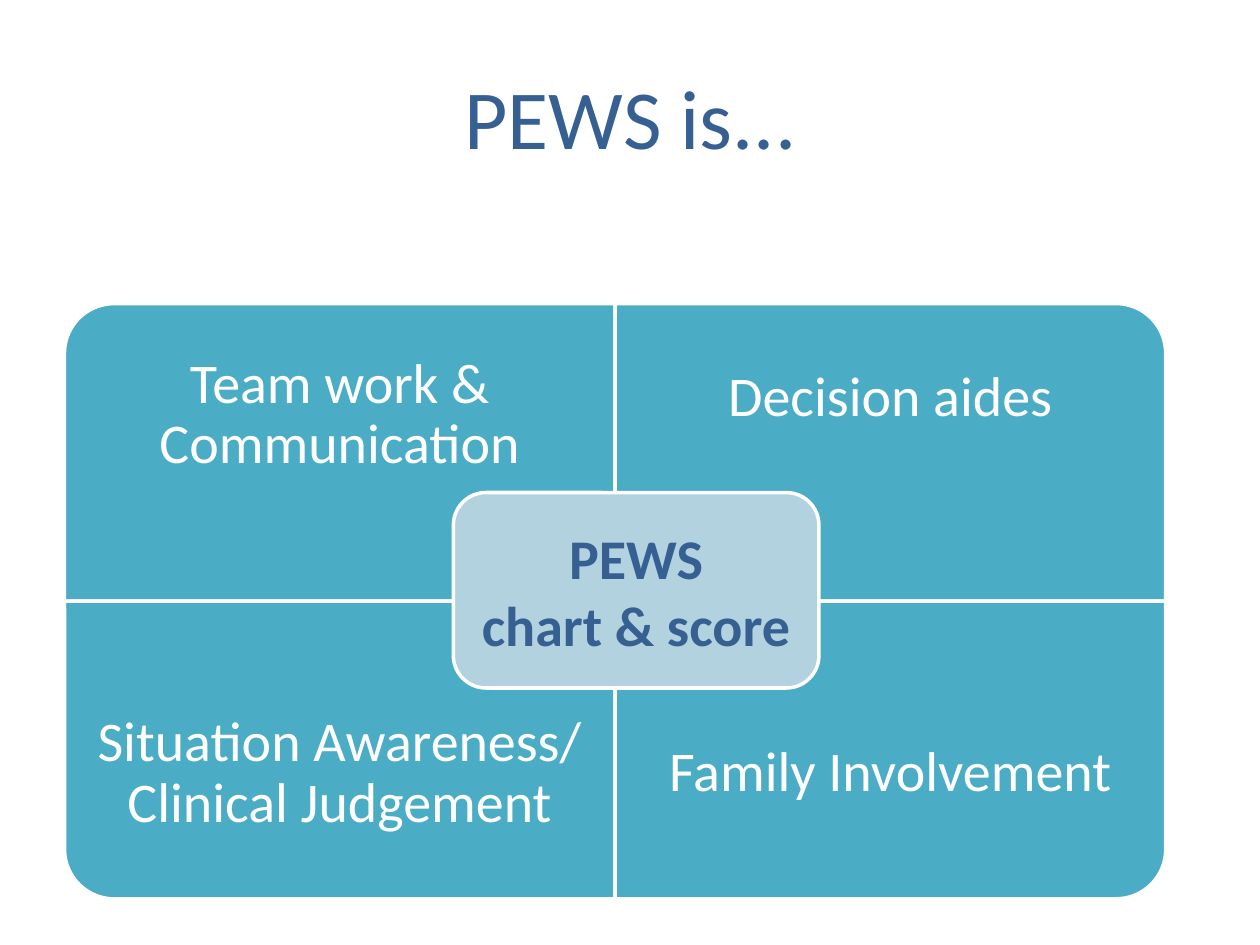
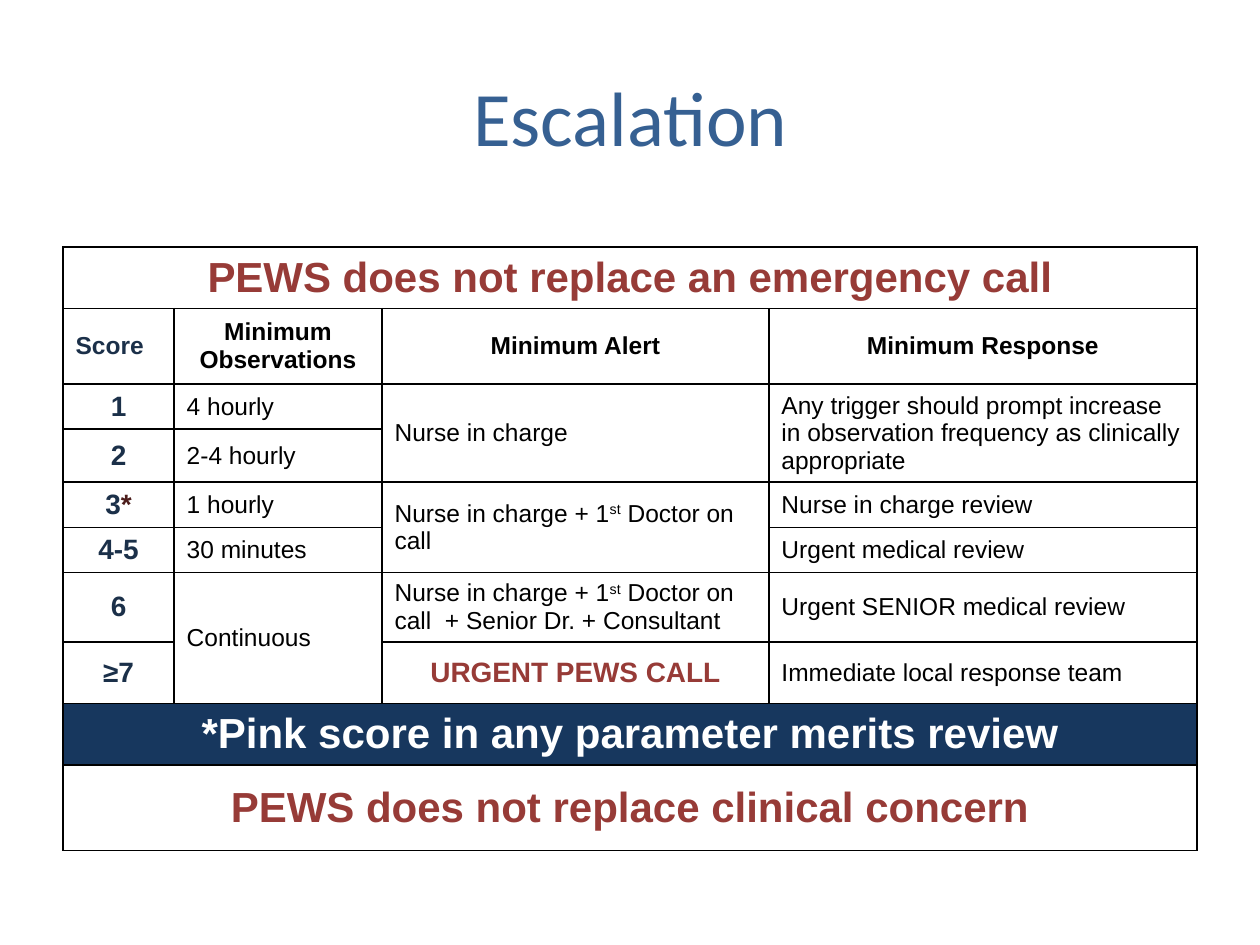
from dataclasses import dataclass
from itertools import product

from lxml.etree import SubElement
from pptx import Presentation
from pptx.dml.color import RGBColor
from pptx.enum.shapes import MSO_SHAPE
from pptx.enum.text import MSO_ANCHOR, PP_ALIGN
from pptx.oxml.ns import qn
from pptx.presentation import Presentation as Deck
from pptx.shapes.autoshape import Shape
from pptx.slide import Slide
from pptx.table import Table, _Cell
from pptx.text.text import TextFrame
from pptx.util import Cm, Pt

BLUE = RGBColor(0x36, 0x60, 0x92)
TEAL = RGBColor(0x4B, 0xAC, 0xC6)
PALE_TEAL = RGBColor(0xB2, 0xD2, 0xDF)
WHITE = RGBColor(0xFF, 0xFF, 0xFF)
BLACK = RGBColor(0, 0, 0)
RED = RGBColor(0x97, 0x3B, 0x37)
DARK_RED = RGBColor(0x4C, 0x1D, 0x1B)
INK = RGBColor(0x1B, 0x30, 0x49)
NAVY = RGBColor(0x17, 0x37, 0x5E)

HEADING_FONT = "Calibri"
TABLE_FONT = "Arial"

QUADRANT_LEFT, QUADRANT_TOP = 1.3, 6.12
QUADRANT_WIDTH, QUADRANT_HEIGHT = 11.1, 6.0
LABEL_HEIGHT = 4.5

COLUMN_WIDTHS = (2.24, 4.19, 7.8, 8.63)
ROW_HEIGHTS = (1.24, 1.52, 0.91, 1.07, 0.91, 0.91, 1.4, 1.24, 1.24, 1.73)


@dataclass(frozen=True)
class Span:
    text: str
    color: RGBColor | None = None
    superscript: bool = False


Text = str | tuple[Span, ...]


@dataclass(frozen=True)
class Quadrant:
    label: str
    column: int
    row: int
    rotation: int
    label_center: float


@dataclass(frozen=True)
class CellStyle:
    size: int = 14
    color: RGBColor = BLACK
    bold: bool = False
    align: PP_ALIGN = PP_ALIGN.LEFT
    fill: RGBColor = WHITE


@dataclass(frozen=True)
class Entry:
    row: int
    column: int
    text: Text
    style: CellStyle
    rows: int = 1
    columns: int = 1


BODY = CellStyle()
SCORE_HEADER = CellStyle(color=INK, bold=True)
HEADER = CellStyle(bold=True, align=PP_ALIGN.CENTER)
SCORE = CellStyle(16, INK, True, PP_ALIGN.CENTER)
URGENT = CellStyle(16, RED, True, PP_ALIGN.CENTER)
WARNING = CellStyle(24, RED, True, PP_ALIGN.CENTER)
BANNER = CellStyle(24, WHITE, True, PP_ALIGN.CENTER, NAVY)

QUADRANTS = (
    Quadrant("Team work & Communication", 0, 0, 270, 8.37),
    Quadrant("Decision aides", 1, 0, 0, 8.03),
    Quadrant("Situation Awareness/ Clinical Judgement", 0, 1, 180, 15.6),
    Quadrant("Family Involvement", 1, 1, 90, 15.6),
)

FIRST_DOCTOR = (Span("Nurse in charge + 1"), Span("st", superscript=True))

ENTRIES = (
    Entry(0, 0, "PEWS does not replace an emergency call", WARNING, columns=4),
    Entry(1, 0, "Score", SCORE_HEADER),
    Entry(1, 1, "Minimum Observations", HEADER),
    Entry(1, 2, "Minimum Alert", HEADER),
    Entry(1, 3, "Minimum Response", HEADER),
    Entry(2, 0, "1", SCORE),
    Entry(2, 1, "4 hourly", BODY),
    Entry(2, 2, "Nurse in charge", BODY, rows=2),
    Entry(2, 3, "Any trigger should prompt increase in observation frequency "
          "as clinically appropriate", BODY, rows=2),
    Entry(3, 0, "2", SCORE),
    Entry(3, 1, "2-4 hourly", BODY),
    Entry(4, 0, (Span("3"), Span("*", DARK_RED)), SCORE),
    Entry(4, 1, "1 hourly", BODY),
    Entry(4, 2, FIRST_DOCTOR + (Span(" Doctor on call"),), BODY, rows=2),
    Entry(4, 3, "Nurse in charge review", BODY),
    Entry(5, 0, "4-5", SCORE),
    Entry(5, 1, "30 minutes", BODY),
    Entry(5, 3, "Urgent medical review", BODY),
    Entry(6, 0, "6", SCORE),
    Entry(6, 1, "Continuous", BODY, rows=2),
    Entry(6, 2, FIRST_DOCTOR + (Span(" Doctor on call  + Senior Dr. + Consultant"),), BODY),
    Entry(6, 3, "Urgent SENIOR medical review", BODY),
    Entry(7, 0, "≥7", SCORE),
    Entry(7, 2, "URGENT PEWS CALL", URGENT),
    Entry(7, 3, "Immediate local response team", BODY),
    Entry(8, 0, "*Pink score in any parameter merits review", BANNER, columns=4),
    Entry(9, 0, "PEWS does not replace clinical concern", WARNING, columns=4),
)


def write_text(frame: TextFrame, text: Text, *, size: int, color: RGBColor,
               font: str = HEADING_FONT, bold: bool = False,
               align: PP_ALIGN = PP_ALIGN.CENTER,
               line_spacing: float | None = None) -> None:
    lines = [(Span(line),) for line in text.split("\n")] if isinstance(text, str) else [text]
    for index, spans in enumerate(lines):
        para = frame.add_paragraph() if index else frame.paragraphs[0]
        para.alignment = align
        if line_spacing:
            para.line_spacing = line_spacing
        for span in spans:
            run = para.add_run()
            run.text = span.text
            run.font.name = font
            run.font.size = Pt(size)
            run.font.bold = bold
            run.font.color.rgb = span.color or color
            if span.superscript:
                run._r.get_or_add_rPr().set("baseline", "30000")


def set_frame(frame: TextFrame, inset: float) -> None:
    frame.word_wrap = True
    frame.vertical_anchor = MSO_ANCHOR.MIDDLE
    frame.margin_left = frame.margin_right = Cm(inset)
    frame.margin_top = frame.margin_bottom = Cm(inset)


def add_page(deck: Deck, title: str, size: int) -> Slide:
    page = deck.slides.add_slide(deck.slide_layouts[5])
    box = page.shapes.title
    box.left, box.top, box.width, box.height = Cm(1.28), Cm(0.75), Cm(22.86), Cm(3.18)
    box.text_frame.vertical_anchor = MSO_ANCHOR.MIDDLE
    write_text(box.text_frame, title, size=size, color=BLUE)
    return page


def add_panel(page: Slide, preset: MSO_SHAPE, left: float, top: float,
              width: float, height: float, fill: RGBColor) -> Shape:
    panel = page.shapes.add_shape(preset, Cm(left), Cm(top), Cm(width), Cm(height))
    panel.shadow.inherit = False
    panel.fill.solid()
    panel.fill.fore_color.rgb = fill
    panel.line.color.rgb = WHITE
    panel.line.width = Pt(2)
    return panel


def add_quadrant(page: Slide, quadrant: Quadrant) -> None:
    left = QUADRANT_LEFT + quadrant.column * QUADRANT_WIDTH
    top = QUADRANT_TOP + quadrant.row * QUADRANT_HEIGHT
    width, height = QUADRANT_WIDTH, QUADRANT_HEIGHT
    if quadrant.rotation % 180:
        width, height = height, width
    panel = add_panel(page, MSO_SHAPE.ROUND_1_RECTANGLE,
                      left + (QUADRANT_WIDTH - width) / 2,
                      top + (QUADRANT_HEIGHT - height) / 2, width, height, TEAL)
    panel.rotation = quadrant.rotation
    label = page.shapes.add_textbox(Cm(left), Cm(quadrant.label_center - LABEL_HEIGHT / 2),
                                    Cm(QUADRANT_WIDTH), Cm(LABEL_HEIGHT))
    set_frame(label.text_frame, 0.63)
    write_text(label.text_frame, quadrant.label, size=32, color=WHITE, line_spacing=0.9)


def add_borders(cell: _Cell) -> None:
    properties = cell._tc.get_or_add_tcPr()
    for side in ("a:lnL", "a:lnR", "a:lnT", "a:lnB"):
        line = SubElement(properties, qn(side), w=str(Pt(1)))
        fill = SubElement(line, qn("a:solidFill"))
        SubElement(fill, qn("a:srgbClr"), val=str(BLACK))


def fill_entry(table: Table, entry: Entry) -> None:
    cell = table.cell(entry.row, entry.column)
    if entry.rows > 1 or entry.columns > 1:
        cell.merge(table.cell(entry.row + entry.rows - 1, entry.column + entry.columns - 1))
    style = entry.style
    cell.vertical_anchor = MSO_ANCHOR.MIDDLE
    cell.fill.solid()
    cell.fill.fore_color.rgb = style.fill
    write_text(cell.text_frame, entry.text, size=style.size, color=style.color,
               font=TABLE_FONT, bold=style.bold, align=style.align)


def add_escalation_table(page: Slide) -> None:
    row_count, column_count = len(ROW_HEIGHTS), len(COLUMN_WIDTHS)
    table = page.shapes.add_table(row_count, column_count, Cm(1.27), Cm(4.98),
                                  Cm(sum(COLUMN_WIDTHS)), Cm(sum(ROW_HEIGHTS))).table
    table.first_row = False
    table.horz_banding = False
    for column, width in zip(table.columns, COLUMN_WIDTHS):
        column.width = Cm(width)
    for row, height in zip(table.rows, ROW_HEIGHTS):
        row.height = Cm(height)
    for row, column in product(range(row_count), range(column_count)):
        cell = table.cell(row, column)
        add_borders(cell)
        cell.fill.solid()
        cell.fill.fore_color.rgb = WHITE
    for entry in ENTRIES:
        fill_entry(table, entry)


def build_overview(deck: Deck) -> None:
    page = add_page(deck, "PEWS is...", 48)
    for quadrant in QUADRANTS:
        add_quadrant(page, quadrant)
    center = add_panel(page, MSO_SHAPE.ROUNDED_RECTANGLE, 9.14, 9.93, 7.37, 3.94, PALE_TEAL)
    set_frame(center.text_frame, 0.25)
    write_text(center.text_frame, "PEWS\nchart & score", size=32, color=BLUE, bold=True)


def build_escalation(deck: Deck) -> None:
    page = add_page(deck, "Escalation", 44)
    add_escalation_table(page)


def main() -> None:
    deck = Presentation()
    deck.slide_width, deck.slide_height = Cm(25.4), Cm(19.05)
    build_overview(deck)
    build_escalation(deck)
    deck.save("out.pptx")


if __name__ == "__main__":
    main()
